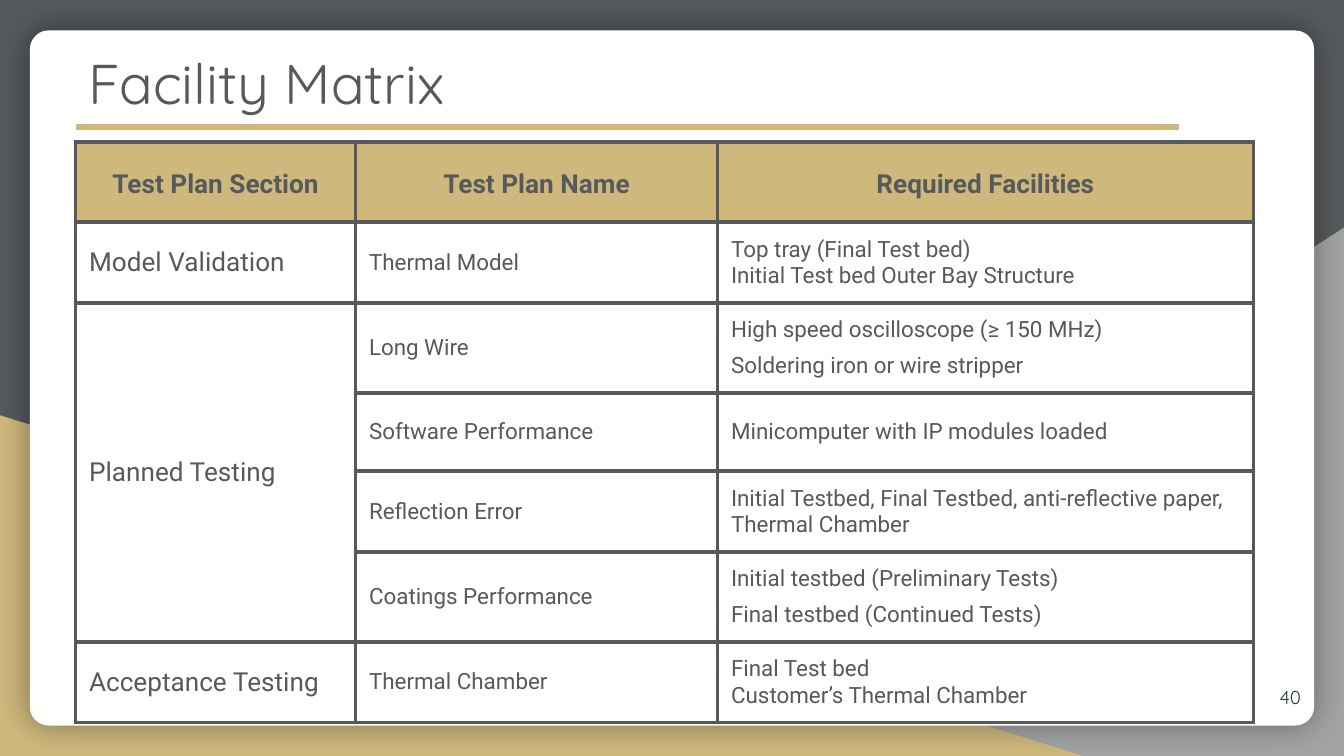
from copy import deepcopy
from dataclasses import dataclass

from lxml.etree import SubElement
from pptx import Presentation
from pptx.dml.color import RGBColor
from pptx.enum.shapes import MSO_CONNECTOR, MSO_SHAPE as Shape
from pptx.enum.text import MSO_ANCHOR as Anchor, PP_ALIGN as Align
from pptx.oxml.ns import qn
from pptx.util import Pt

COLORS = {
    "slate": "565A5C",
    "gray": "A2A4A3",
    "gold": "CFB87C",
    "white": "FFFFFF",
    "number": "233A44",
    "shadow": "000000",
}
TITLE_FONT, BODY_FONT = "Quicksand", "Roboto"
MARGIN = 40.5
COLUMN_WIDTHS = (150, 194, 287)
HEADER_HEIGHT, ROW_HEIGHT = 43, 42
HEADERS = ("Test Plan Section", "Test Plan Name", "Required Facilities")


@dataclass(frozen=True)
class Panel:
    shape: Shape
    left: float
    top: float
    width: float
    height: float
    color: str
    flipped: bool = False


@dataclass(frozen=True)
class TestPlan:
    name: str
    facilities: str


PANELS = (
    Panel(Shape.RIGHT_TRIANGLE, 282, 122, 438, 283, "gray", flipped=True),
    Panel(Shape.RIGHT_TRIANGLE, 0, 222.5, 580, 182.5, "gold"),
)
CARD = Panel(Shape.ROUNDED_RECTANGLE, 16, 16.3, 688, 372.4, "white")

# A line feed starts a paragraph, a vertical tab a new line within one.
SECTIONS = {
    "Model Validation": (
        TestPlan("Thermal Model",
                 "Top tray (Final Test bed)\vInitial Test bed Outer Bay Structure"),
    ),
    "Planned Testing": (
        TestPlan("Long Wire",
                 "High speed oscilloscope (≥ 150 MHz)\nSoldering iron or wire stripper"),
        TestPlan("Software Performance", "Minicomputer with IP modules loaded"),
        TestPlan("Reflection Error",
                 "Initial Testbed, Final Testbed, anti-reflective paper, Thermal Chamber"),
        TestPlan("Coatings Performance",
                 "Initial testbed (Preliminary Tests)\nFinal testbed (Continued Tests)"),
    ),
    "Acceptance Testing": (
        TestPlan("Thermal Chamber", "Final Test bed\vCustomer’s Thermal Chamber"),
    ),
}


def rgb(name: str) -> RGBColor:
    return RGBColor.from_string(COLORS[name])


def write_text(frame, text: str, *, size: float, font: str = BODY_FONT,
               color: str = "slate", bold: bool = False, align=Align.LEFT,
               line_spacing: float = 1.0, gap: float = 5) -> None:
    """Fill a text frame, keeping line breaks at the size of their text."""
    for index, line in enumerate(text.split("\n")):
        paragraph = frame.add_paragraph() if index else frame.paragraphs[0]
        paragraph.text = line
        paragraph.alignment = align
        paragraph.line_spacing = line_spacing
        if index:
            paragraph.space_before = Pt(gap)
        for run in paragraph.runs:
            run.font.name = font
            run.font.size = Pt(size)
            run.font.bold = bold
            run.font.color.rgb = rgb(color)
        for line_break in paragraph._p.findall(qn("a:br")):
            line_break.append(deepcopy(paragraph.runs[0]._r.rPr))


def add_panel(slide, panel: Panel):
    shape = slide.shapes.add_shape(panel.shape, Pt(panel.left), Pt(panel.top),
                                   Pt(panel.width), Pt(panel.height))
    shape.shadow.inherit = False
    shape.fill.solid()
    shape.fill.fore_color.rgb = rgb(panel.color)
    shape.line.fill.background()
    if panel.flipped:
        shape._element.spPr.find(qn("a:xfrm")).set("flipH", "1")
    return shape


def add_card(slide) -> None:
    card = add_panel(slide, CARD)
    card.adjustments[0] = 0.027
    effects = card._element.spPr.find(qn("a:effectLst"))
    shadow = SubElement(effects, qn("a:outerShdw"), blurRad=str(Pt(18)),
                        dist="0", dir="0", algn="ctr", rotWithShape="0")
    color = SubElement(shadow, qn("a:srgbClr"), val=COLORS["shadow"])
    SubElement(color, qn("a:alpha"), val="40000")


def add_rule(slide) -> None:
    rule = slide.shapes.add_connector(MSO_CONNECTOR.STRAIGHT, Pt(MARGIN + 0.25),
                                      Pt(68), Pt(631.5), Pt(68))
    rule.line.color.rgb = rgb("gold")
    rule.line.width = Pt(3)
    SubElement(rule._element.spPr, qn("a:effectLst"))


def add_text_box(slide, text: str, left: float, top: float, width: float,
                 height: float, *, anchor=Anchor.TOP, **text_format) -> None:
    box = slide.shapes.add_textbox(Pt(left), Pt(top), Pt(width), Pt(height))
    frame = box.text_frame
    frame.word_wrap = True
    frame.vertical_anchor = anchor
    frame.margin_left = frame.margin_right = Pt(7.2)
    frame.margin_top = frame.margin_bottom = Pt(7.2)
    write_text(frame, text, **text_format)


def style_cell(cell, fill: str | None) -> None:
    cell.vertical_anchor = Anchor.MIDDLE
    cell.margin_left = cell.margin_right = Pt(7.2)
    cell.margin_top = cell.margin_bottom = Pt(7.2)
    properties = cell._tc.get_or_add_tcPr()
    for side in ("lnL", "lnR", "lnT", "lnB"):
        border = SubElement(properties, qn(f"a:{side}"), w=str(Pt(2.25)))
        line_fill = SubElement(border, qn("a:solidFill"))
        SubElement(line_fill, qn("a:srgbClr"), val=COLORS["slate"])
    if fill:
        cell.fill.solid()
        cell.fill.fore_color.rgb = rgb(fill)
    else:
        cell.fill.background()


def add_matrix(slide) -> None:
    row_count = 1 + sum(len(plans) for plans in SECTIONS.values())
    height = HEADER_HEIGHT + ROW_HEIGHT * (row_count - 1)
    table = slide.shapes.add_table(row_count, len(HEADERS), Pt(MARGIN), Pt(76),
                                   Pt(sum(COLUMN_WIDTHS)), Pt(height)).table
    table.horz_banding = table.first_row = False
    for column, width in zip(table.columns, COLUMN_WIDTHS):
        column.width = Pt(width)
    for index, row in enumerate(table.rows):
        row.height = Pt(ROW_HEIGHT if index else HEADER_HEIGHT)
        for cell in row.cells:
            style_cell(cell, None if index else "gold")

    for index, header in enumerate(HEADERS):
        write_text(table.cell(0, index).text_frame, header, size=14, bold=True,
                   align=Align.CENTER, line_spacing=1.14)
    first = 1
    for section, plans in SECTIONS.items():
        last = first + len(plans) - 1
        if last > first:
            table.cell(first, 0).merge(table.cell(last, 0))
        write_text(table.cell(first, 0).text_frame, section, size=14)
        for index, plan in enumerate(plans, first):
            write_text(table.cell(index, 1).text_frame, plan.name, size=12)
            write_text(table.cell(index, 2).text_frame, plan.facilities, size=12)
        first = last + 1


def main() -> None:
    presentation = Presentation()
    presentation.slide_width, presentation.slide_height = Pt(720), Pt(405)
    slide = presentation.slides.add_slide(presentation.slide_layouts[6])
    slide.background.fill.solid()
    slide.background.fill.fore_color.rgb = rgb("slate")
    for panel in PANELS:
        add_panel(slide, panel)
    add_card(slide)
    add_rule(slide)
    add_text_box(slide, "Facility Matrix", MARGIN, 19, 591, 49.5,
                 size=30, font=TITLE_FONT)
    add_text_box(slide, "40", 661, 358, 43, 31, anchor=Anchor.MIDDLE, size=10,
                 font=TITLE_FONT, color="number", align=Align.RIGHT)
    add_matrix(slide)
    presentation.save("out.pptx")


if __name__ == "__main__":
    main()
